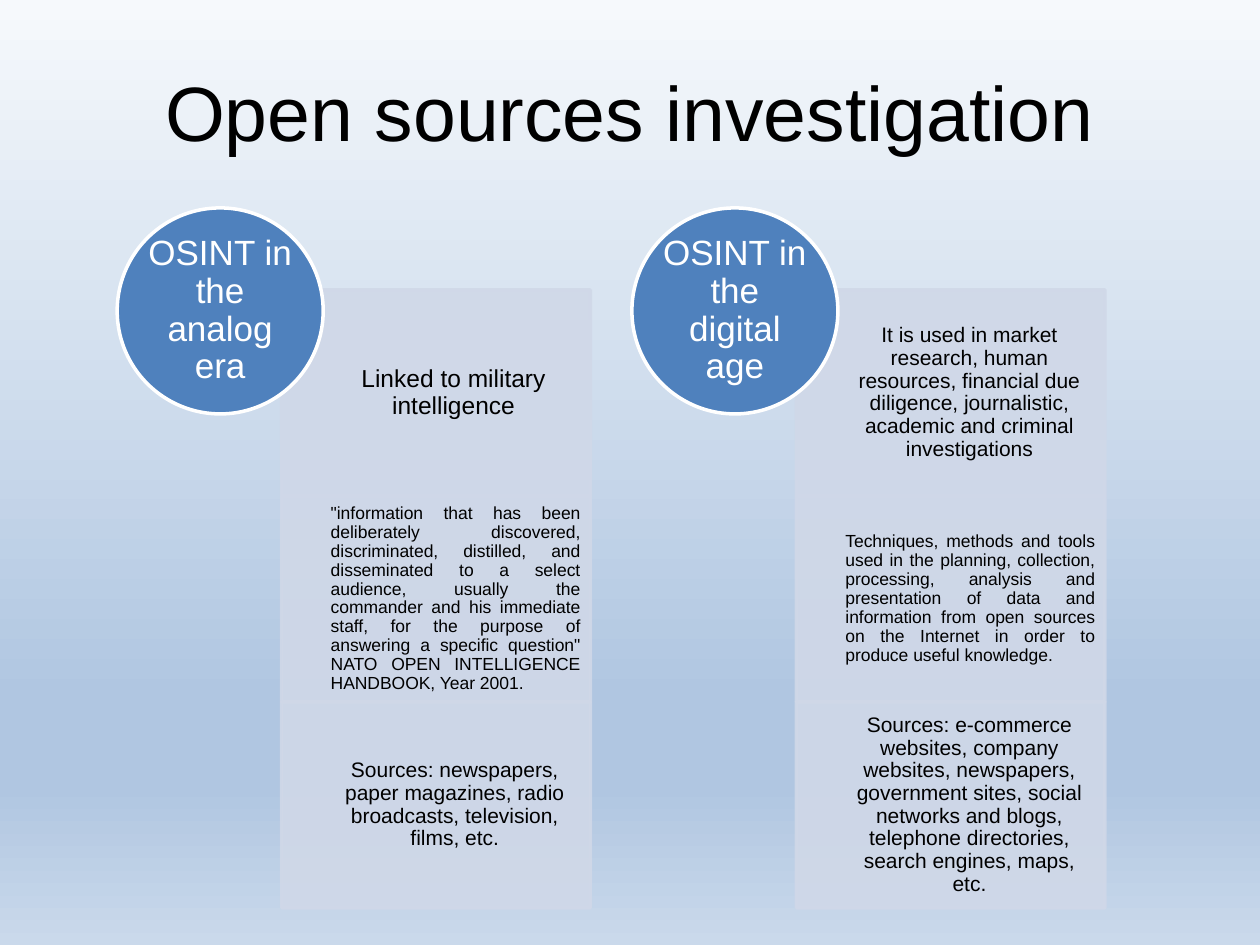
from dataclasses import dataclass

from lxml.etree import SubElement
from pptx import Presentation
from pptx.dml.color import RGBColor
from pptx.enum.shapes import MSO_SHAPE
from pptx.enum.text import MSO_ANCHOR, PP_ALIGN
from pptx.oxml.ns import qn
from pptx.slide import Slide
from pptx.util import Inches, Pt


@dataclass(frozen=True)
class Theme:
    font: str = "Arial"
    text: str = "000000"
    light: str = "FFFFFF"
    circle: str = "4F81BD"
    panel: str = "D0D8E8"
    panel_alpha: int = 90
    background: tuple = ((0, "F6F9FC"), (74, "B0C6E1"), (83, "B0C6E1"), (100, "CAD9EB"))
    title_size: int = 44
    circle_size: int = 20
    line_width: int = 2


@dataclass(frozen=True)
class Note:
    text: str
    size: int
    inset: float
    align: PP_ALIGN = PP_ALIGN.CENTER


@dataclass(frozen=True)
class Era:
    name: str
    left: float
    notes: tuple[Note, ...]


THEME = Theme()
CELL = 1.635  # panel height, also the circle diameter
PANEL_TOP, PANEL_WIDTH = 2.3, 2.45
PANEL_OFFSET, TEXT_INDENT = 1.305, 0.39
CIRCLE_TOP, CIRCLE_PAD = 1.65, 0.24

ERAS = (
    Era("OSINT in the analog era", 0.93, (
        Note("Linked to military intelligence", 14, 0.11),
        Note("\"information that has been deliberately discovered, discriminated, "
             "distilled, and disseminated to a select audience, usually the commander "
             "and his immediate staff, for the purpose of answering a specific "
             "question\" NATO OPEN INTELLIGENCE HANDBOOK, Year 2001.",
             10, 0.08, PP_ALIGN.JUSTIFY),
        Note("Sources: newspapers, paper magazines, radio broadcasts, television, "
             "films, etc.", 12, 0.09),
    )),
    Era("OSINT in the digital age", 5.015, (
        Note("It is used in market research, human resources, financial due diligence, "
             "journalistic, academic and criminal investigations", 12, 0.09),
        Note("Techniques, methods and tools used in the planning, collection, "
             "processing, analysis and presentation of data and information from open "
             "sources on the Internet in order to produce useful knowledge.",
             10, 0.08, PP_ALIGN.JUSTIFY),
        Note("Sources: e-commerce websites, company websites, newspapers, government "
             "sites, social networks and blogs, telephone directories, search engines, "
             "maps, etc.", 12, 0.09),
    )),
)


def set_background(s: Slide) -> None:
    s.background.fill.gradient()
    grad = s._element.find(".//" + qn("a:gradFill"))
    for child in list(grad):
        grad.remove(child)
    stops = SubElement(grad, qn("a:gsLst"))
    for position, color in THEME.background:
        stop = SubElement(stops, qn("a:gs"), pos=str(position * 1000))
        SubElement(stop, qn("a:srgbClr"), val=color)
    SubElement(grad, qn("a:lin"), ang="5400000", scaled="0")


def add_box(s: Slide, kind: MSO_SHAPE, left: float, top: float, width: float,
            fill: str, line: str, alpha: int = 100) -> None:
    sp = s.shapes.add_shape(kind, Inches(left), Inches(top), Inches(width), Inches(CELL))
    sp.shadow.inherit = False
    sp.fill.solid()
    sp.fill.fore_color.rgb = RGBColor.from_string(fill)
    sp.line.color.rgb = RGBColor.from_string(line)
    sp.line.width = Pt(THEME.line_width)
    if alpha < 100:
        for color in sp._element.spPr.iter(qn("a:srgbClr")):
            SubElement(color, qn("a:alpha"), val=str(alpha * 1000))


def add_text(s: Slide, text: str, left: float, top: float, width: float, height: float,
             size: int, color: str = THEME.text, inset: float = 0,
             align: PP_ALIGN = PP_ALIGN.CENTER) -> None:
    sp = s.shapes.add_textbox(Inches(left), Inches(top), Inches(width), Inches(height))
    tf = sp.text_frame
    tf.word_wrap = True
    tf.vertical_anchor = MSO_ANCHOR.MIDDLE
    tf.margin_left = 0
    tf.margin_top = tf.margin_right = tf.margin_bottom = Inches(inset)
    tf.text = text
    p = tf.paragraphs[0]
    p.alignment = align
    p.line_spacing = 0.9
    r = p.runs[0]
    r.font.name = THEME.font
    r.font.size = Pt(size)
    r.font.color.rgb = RGBColor.from_string(color)


def add_era(s: Slide, era: Era) -> None:
    # Stacked panels
    left = era.left + PANEL_OFFSET
    for i, note in enumerate(era.notes):
        top = PANEL_TOP + i * CELL
        add_box(s, MSO_SHAPE.RECTANGLE, left, top, PANEL_WIDTH,
                THEME.panel, THEME.panel, THEME.panel_alpha)
        add_text(s, note.text, left + TEXT_INDENT, top, PANEL_WIDTH - TEXT_INDENT, CELL,
                 note.size, inset=note.inset, align=note.align)

    # Circle heading overlapping the first panel
    add_box(s, MSO_SHAPE.OVAL, era.left, CIRCLE_TOP, CELL, THEME.circle, THEME.light)
    side = CELL - 2 * CIRCLE_PAD
    add_text(s, era.name, era.left + CIRCLE_PAD, CIRCLE_TOP + CIRCLE_PAD, side, side,
             THEME.circle_size, THEME.light)


def main() -> None:
    prs = Presentation()
    prs.slide_width, prs.slide_height = Inches(10), Inches(7.5)
    s = prs.slides.add_slide(prs.slide_layouts[6])
    set_background(s)
    add_text(s, "Open sources investigation", 0.5, 0.59, 9, 0.67, THEME.title_size)
    for era in ERAS:
        add_era(s, era)
    prs.save("out.pptx")


if __name__ == "__main__":
    main()
